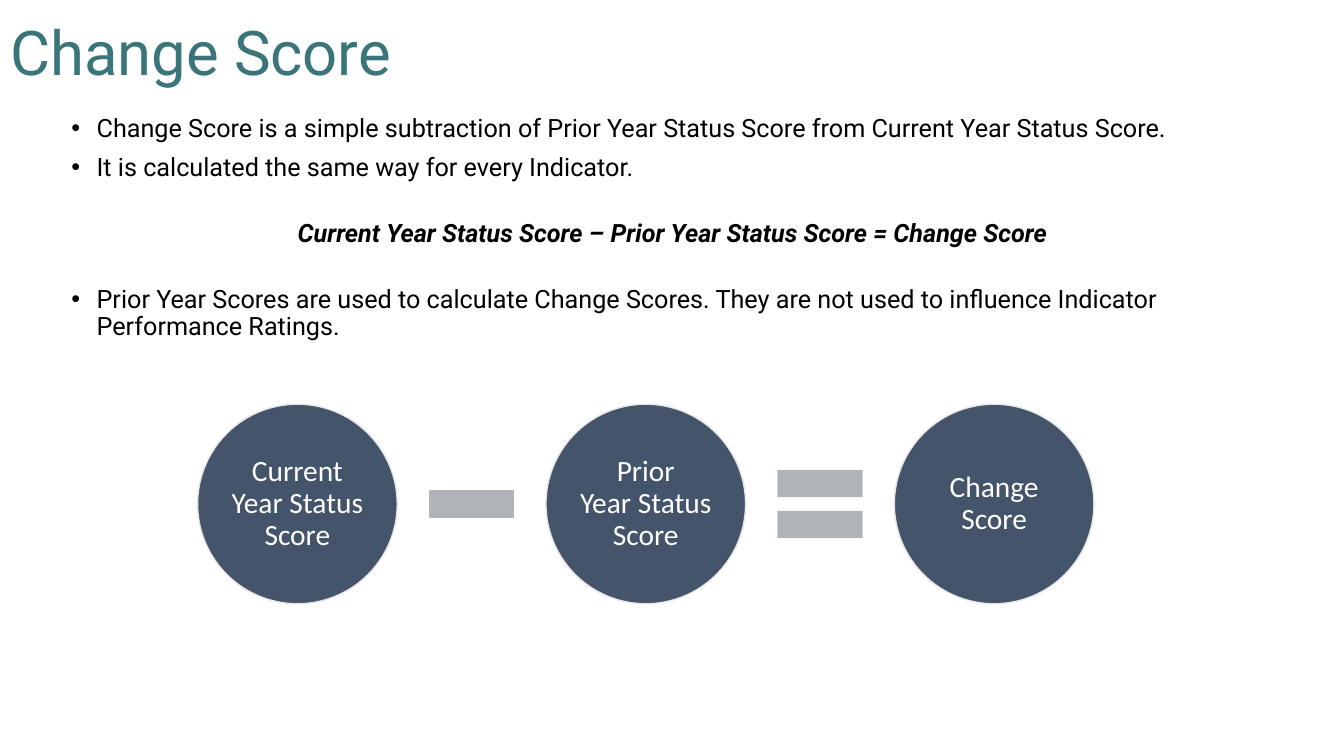
from lxml import etree
from pptx import Presentation
from pptx.dml.color import RGBColor
from pptx.enum.shapes import MSO_SHAPE as Shape
from pptx.enum.text import MSO_ANCHOR as Anchor, MSO_AUTO_SIZE as Fit, PP_ALIGN as Align
from pptx.oxml.ns import qn
from pptx.util import Inches, Pt

COLORS = {"title": "3A757A", "text": "000000", "disc": "44546A",
          "edge": "E7E6E6", "sign": "B0B4B9", "label": "FFFFFF"}
POINTS = [
    ("Change Score is a simple subtraction of Prior Year Status Score "
     "from Current Year Status Score.", 0, True),
    ("It is calculated the same way for every Indicator.", 8, True),
    ("Current Year Status Score – Prior Year Status Score = Change Score", 28, False),
    ("Prior Year Scores are used to calculate Change Scores. They are not used "
     "to influence Indicator Performance Ratings.", 27.5, True),
]
TERMS = ["Current Year Status Score", "Prior\vYear Status Score", "Change Score"]
SIGNS = [Shape.MATH_MINUS, Shape.MATH_EQUAL]


def color(name):
    """Return the named colour."""
    return RGBColor.from_string(COLORS[name])


def style(para, size, face, tint, align):
    """Format a whole paragraph."""
    para.font.size = Pt(size)
    para.font.name = face
    para.font.color.rgb = color(tint)
    para.alignment = align
    para.line_spacing = 0.9


def bullet(para):
    """Give a paragraph a hanging bullet."""
    props = para._p.get_or_add_pPr()
    props.set("marL", str(Inches(0.25)))
    props.set("indent", str(-Inches(0.25)))
    font = etree.SubElement(props, qn("a:buFont"))
    font.set("typeface", "Arial")
    etree.SubElement(props, qn("a:buChar")).set("char", "•")


def add_title(slide, left, top, width, height):
    """Place and format the slide title."""
    title = slide.shapes.title
    title.left, title.top = Inches(left), Inches(top)
    title.width, title.height = Inches(width), Inches(height)
    frame = title.text_frame
    frame.text = "Change Score"
    frame.auto_size = Fit.NONE
    frame.vertical_anchor = Anchor.BOTTOM
    style(frame.paragraphs[0], 44, "Roboto", "title", Align.LEFT)


def add_points(slide, left, top, width, height):
    """Add the bullets and the centred formula."""
    box = slide.shapes.add_textbox(Inches(left), Inches(top), Inches(width), Inches(height))
    frame = box.text_frame
    frame.word_wrap = True
    for i, (text, gap, marked) in enumerate(POINTS):
        para = frame.add_paragraph() if i else frame.paragraphs[0]
        para.text = text
        style(para, 18, "Roboto", "text", Align.LEFT if marked else Align.CENTER)
        para.space_before = Pt(gap)
        if marked:
            bullet(para)
        else:
            para.font.bold = para.font.italic = True


def add_part(slide, kind, left, top, size, fill):
    """Add a plain filled square-bounded shape."""
    part = slide.shapes.add_shape(kind, Inches(left), Inches(top), Inches(size), Inches(size))
    part.shadow.inherit = False
    part.fill.solid()
    part.fill.fore_color.rgb = color(fill)
    part.line.fill.background()
    return part


def add_disc(slide, text, left, top, size):
    """Add a labelled circle."""
    disc = add_part(slide, Shape.OVAL, left, top, size, "disc")
    disc.line.color.rgb = color("edge")
    disc.line.width = Pt(1)
    frame = disc.text_frame
    frame.word_wrap = True
    frame.vertical_anchor = Anchor.MIDDLE
    frame.margin_left = frame.margin_right = Inches(0.03)
    frame.margin_top = frame.margin_bottom = Inches(0.03)
    frame.text = text
    style(frame.paragraphs[0], 21, "Calibri", "label", Align.CENTER)


def add_sum(slide, left, top, width, height):
    """Lay out the circles with the signs centred in the gaps."""
    step = (width - height) / (len(TERMS) - 1)
    size = 1.15
    for i, term in enumerate(TERMS):
        add_disc(slide, term, left + i * step, top, height)
    for i, sign in enumerate(SIGNS):
        mid = left + height / 2 + (i + 0.5) * step
        add_part(slide, sign, mid - size / 2, top + (height - size) / 2, size, "sign")


def main():
    """Build and save the slide."""
    deck = Presentation()
    deck.slide_width, deck.slide_height = Inches(13.33), Inches(7.5)
    slide = deck.slides.add_slide(deck.slide_layouts[5])
    add_title(slide, 0, -0.16, 11.55, 1.09)
    add_points(slide, 0.61, 1.1, 12.12, 2.35)
    add_sum(slide, 1.96, 4.01, 8.89, 1.98)
    deck.save("out.pptx")


if __name__ == "__main__":
    main()
